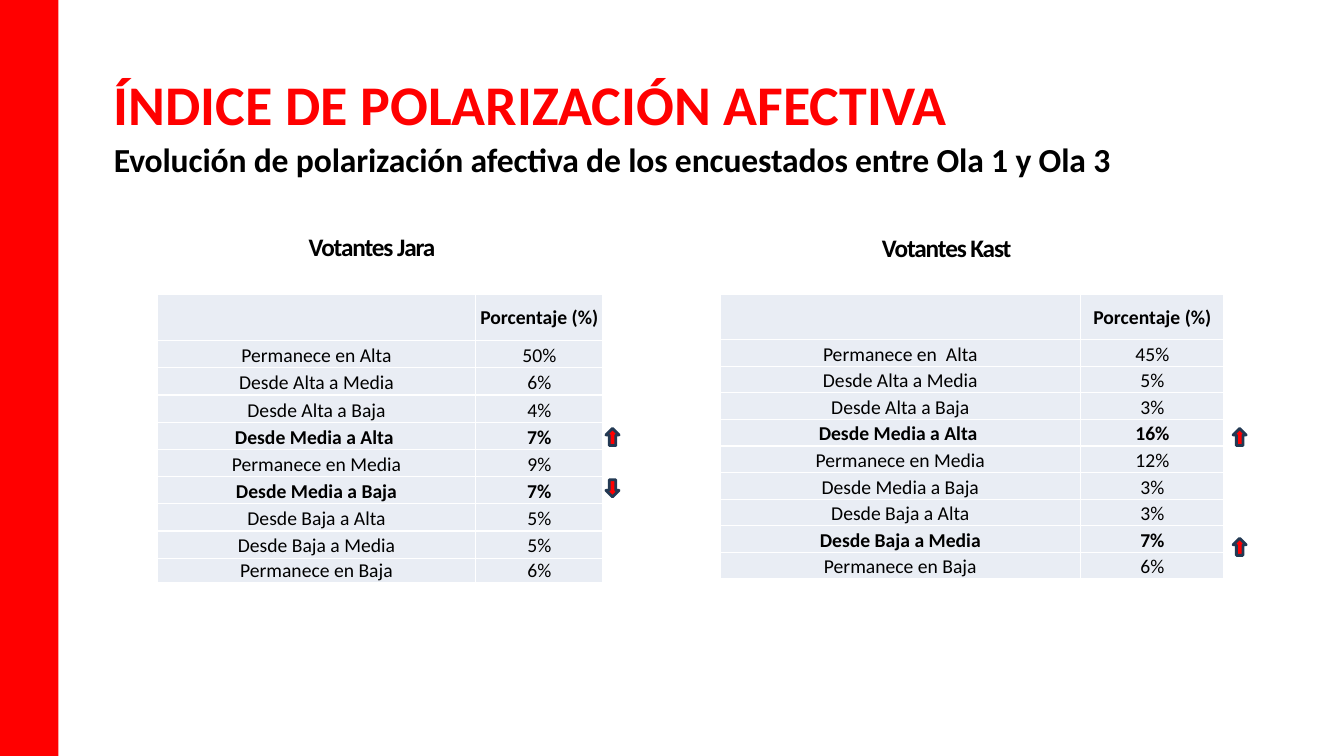
from lxml.etree import SubElement
from pptx import Presentation
from pptx.dml.color import RGBColor
from pptx.enum.shapes import MSO_SHAPE as Shape
from pptx.enum.text import MSO_ANCHOR as Anchor, PP_ALIGN as Align
from pptx.oxml.ns import qn
from pptx.util import Pt

PX = 9144  # 100 px to the inch
RED = RGBColor(0xFF, 0x00, 0x00)
BLACK = RGBColor(0x00, 0x00, 0x00)
NAVY = RGBColor(0x23, 0x39, 0x53)
PALE = RGBColor(0xE9, 0xED, 0xF4)


def write(frame, text, size=14, bold=False, color=BLACK, align=Align.CENTER, track=0):
    """Fill a text frame; track is letter spacing in hundredths of a point."""
    para = frame.paragraphs[0]
    para.alignment = align
    run = para.add_run()
    run.text = text
    font = run.font
    font.name, font.size, font.bold = "Calibri", Pt(size), bold
    font.color.rgb = color
    if track:
        font._element.set("spc", str(track))


def add_box(left, top, width, height, text, inset=None, **style):
    box = slide.shapes.add_textbox(left * PX, top * PX, width * PX, height * PX)
    frame = box.text_frame
    frame.word_wrap = True
    if inset is not None:
        frame.margin_left = frame.margin_top = inset * PX
        frame.margin_right = frame.margin_bottom = 0
    write(frame, text, **style)


prs = Presentation()
prs.slide_width, prs.slide_height = 1333 * PX, 750 * PX
slide = prs.slides.add_slide(prs.slide_layouts[6])

bar = slide.shapes.add_shape(Shape.RECTANGLE, 0, 0, 58 * PX, 750 * PX)
bar.shadow.inherit = False
bar.fill.solid()
bar.fill.fore_color.rgb = RED
bar.line.fill.background()

add_box(112, 68, 995, 69, "ÍNDICE DE POLARIZACIÓN AFECTIVA", inset=1,
        size=40, bold=True, color=RED, align=Align.LEFT)
add_box(112, 137, 1189, 42,
        "Evolución de polarización afectiva de los encuestados entre Ola 1 y Ola 3",
        inset=1, size=24, bold=True, align=Align.LEFT, track=-10)
add_box(219, 225, 300, 40, "Votantes Jara", size=18, bold=True, track=-80)
add_box(789, 226, 300, 40, "Votantes Kast", size=18, bold=True, track=-80)

moves = ["Permanece en Alta", "Desde Alta a Media", "Desde Alta a Baja",
         "Desde Media a Alta ", "Permanece en Media", "Desde Media a Baja",
         "Desde Baja a Alta", "Desde Baja a Media", "Permanece en Baja"]
jara = list(zip(moves, [50, 6, 4, 7, 9, 7, 5, 5, 6]))
kast = list(zip(["Permanece en  Alta"] + moves[1:], [45, 5, 3, 16, 12, 3, 3, 7, 6]))

# left, column widths, row heights, data, bold rows
tables = [
    (156, [316, 126], [46] + [27] * 8 + [24], jara, (4, 6)),
    (714, [358, 142], [45] + [26.4] * 9, kast, (4, 8)),
]
for left, widths, heights, data, strong in tables:
    rows = [("", "Porcentaje (%)")] + [(move, f"{share}%") for move, share in data]
    table = slide.shapes.add_table(len(rows), 2, left * PX, 292 * PX,
                                   sum(widths) * PX, int(sum(heights) * PX)).table
    for col, width in zip(table.columns, widths):
        col.width = width * PX
    for i, texts in enumerate(rows):
        table.rows[i].height = int(heights[i] * PX)
        for cell, text in zip(table.rows[i].cells, texts):
            cell.margin_left = cell.margin_right = cell.margin_top = PX
            cell.margin_bottom = 0
            cell.vertical_anchor = Anchor.BOTTOM if i else Anchor.MIDDLE
            if text:
                write(cell.text_frame, text, bold=i == 0 or i in strong)
            props = cell._tc.get_or_add_tcPr()
            for side in ("a:lnL", "a:lnR", "a:lnT", "a:lnB"):
                edge = SubElement(props, qn(side), w=str(Pt(1)))
                SubElement(SubElement(edge, qn("a:solidFill")), qn("a:srgbClr"), val="FFFFFF")
            cell.fill.solid()
            cell.fill.fore_color.rgb = PALE

for left, top, turn in [(601, 425, 180), (601, 476, 0), (1223, 425, 180), (1223, 534, 180)]:
    arrow = slide.shapes.add_shape(Shape.DOWN_ARROW, left * PX, top * PX, 13 * PX, 17 * PX)
    arrow.rotation = turn
    arrow.shadow.inherit = False
    arrow.fill.solid()
    arrow.fill.fore_color.rgb = RED
    arrow.line.color.rgb = NAVY
    arrow.line.width = Pt(2)

prs.save("out.pptx")
